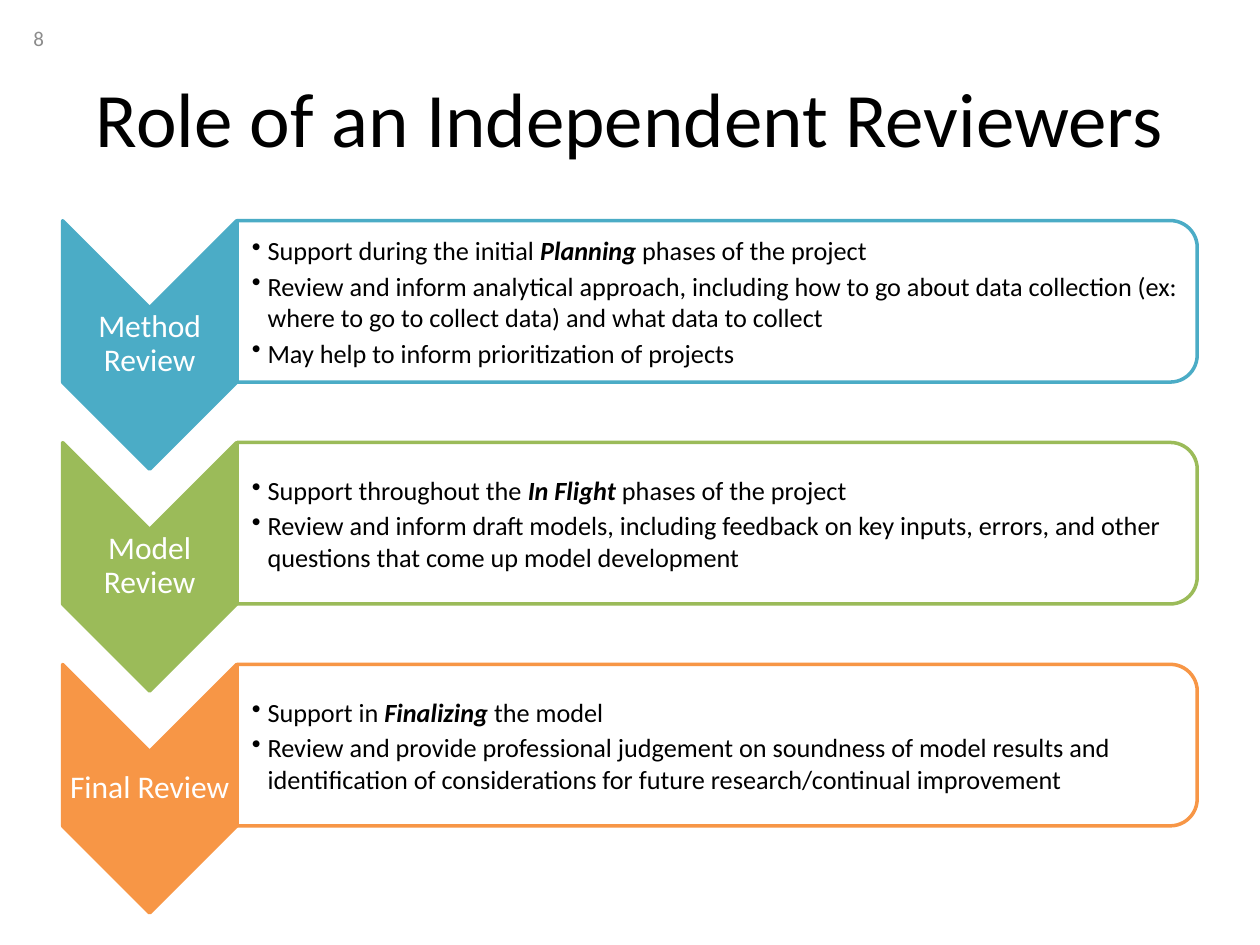
"""Build the slide on the role of independent reviewers in three review stages."""
import lxml.etree
import pptx
import pptx.dml.color
import pptx.enum.shapes
import pptx.enum.text
import pptx.oxml.ns
import pptx.util

Pt = pptx.util.Pt
RGB = pptx.dml.color.RGBColor.from_string
qn = pptx.oxml.ns.qn
SHAPE = pptx.enum.shapes.MSO_SHAPE
CENTER = pptx.enum.text.PP_ALIGN.CENTER
COLORS = {"text": "000000", "light": "FFFFFF", "number": "8C8C8C",
          "method": "4BACC6", "model": "9BBB59", "final": "F79646"}

presentation = pptx.Presentation()
presentation.slide_width, presentation.slide_height = Pt(720), Pt(540)
slide = presentation.slides.add_slide(presentation.slide_layouts[6])


def add_text(left, top, width, height, paragraphs, size, color, align=None, insets=None):
    frame = slide.shapes.add_textbox(Pt(left), Pt(top), Pt(width), Pt(height)).text_frame
    frame.word_wrap = True
    frame.vertical_anchor = pptx.enum.text.MSO_ANCHOR.MIDDLE
    if insets:
        frame.margin_left, frame.margin_right = Pt(insets[0]), Pt(insets[1])
        frame.margin_top = frame.margin_bottom = Pt(insets[1])
    for index, parts in enumerate(paragraphs):
        paragraph = frame.paragraphs[0] if index == 0 else frame.add_paragraph()
        paragraph.alignment = align
        paragraph.font.name = "Calibri"
        paragraph.font.size = Pt(size)
        paragraph.font.color.rgb = RGB(COLORS[color])
        for position, part in enumerate(parts):
            run = paragraph.add_run()
            run.text = part
            if position == 1:
                run.font.bold = run.font.italic = True
    return frame


def add_outline(kind, center_x, center_y, width, height, fill, line):
    outline = slide.shapes.add_shape(kind, Pt(center_x - width / 2), Pt(center_y - height / 2),
                                     Pt(width), Pt(height))
    outline.rotation = 90
    outline.shadow.inherit = False
    outline.fill.solid()
    outline.fill.fore_color.rgb = RGB(COLORS[fill])
    outline.line.color.rgb = RGB(COLORS[line])
    outline.line.width = Pt(2)
    return outline


add_text(36, 21.6, 648, 90, [["Role of an Independent Reviewers"]], 44, "text", CENTER)

stages = [
    ("method", "Method Review", [
        ["Support during the initial ", "Planning", " phases of the project"],
        ["Review and inform analytical approach, including how to go about data collection "
         "(ex: where to go to collect data) and what data to collect"],
        ["May help to inform prioritization of projects"]]),
    ("model", "Model Review", [
        ["Support throughout the ", "In Flight ", "phases of the project"],
        ["Review and inform draft models, including feedback on key inputs, errors, "
         "and other questions that come up model development"]]),
    ("final", "Final Review", [
        ["Support in ", "Finalizing", " the model"],
        ["Review and provide professional judgement on soundness of model results and "
         "identification of considerations for future research/continual improvement"]]),
]
for index, (color, name, duties) in enumerate(stages):
    offset = index * 126.8
    add_outline(SHAPE.CHEVRON, 85.5, 197.1 + offset, 142, 99.4, color, color)
    label = add_text(35.8, 175.7 + offset, 99.4, 42.5, [[name]], 18, "light", CENTER, (0.9, 0.9))
    label.paragraphs[0].line_spacing = 0.9

    panel = add_outline(SHAPE.ROUND_2_SAME_RECTANGLE, 409.8, 172.2 + offset, 92.3, 548.6,
                        "light", color)
    panel_color = panel.fill._xPr.find(qn("a:solidFill"))[0]
    lxml.etree.SubElement(panel_color, qn("a:alpha"), val="90000")

    duty_list = add_text(135.4, 130.6 + offset, 544.2, 83.4, duties, 15, "text",
                         insets=(8.5, 0.9))
    for paragraph in duty_list.paragraphs:
        paragraph.space_after = Pt(2.25)
        properties = paragraph._p.get_or_add_pPr()
        properties.set("marL", str(Pt(9)))
        properties.set("indent", str(Pt(-9)))
        bullet = lxml.etree.Element(qn("a:buChar"), char="•")
        properties.find(qn("a:spcAft")).addnext(bullet)

add_text(12, 7.5, 168, 28.8, [["8"]], 12, "number")

presentation.save("out.pptx")
